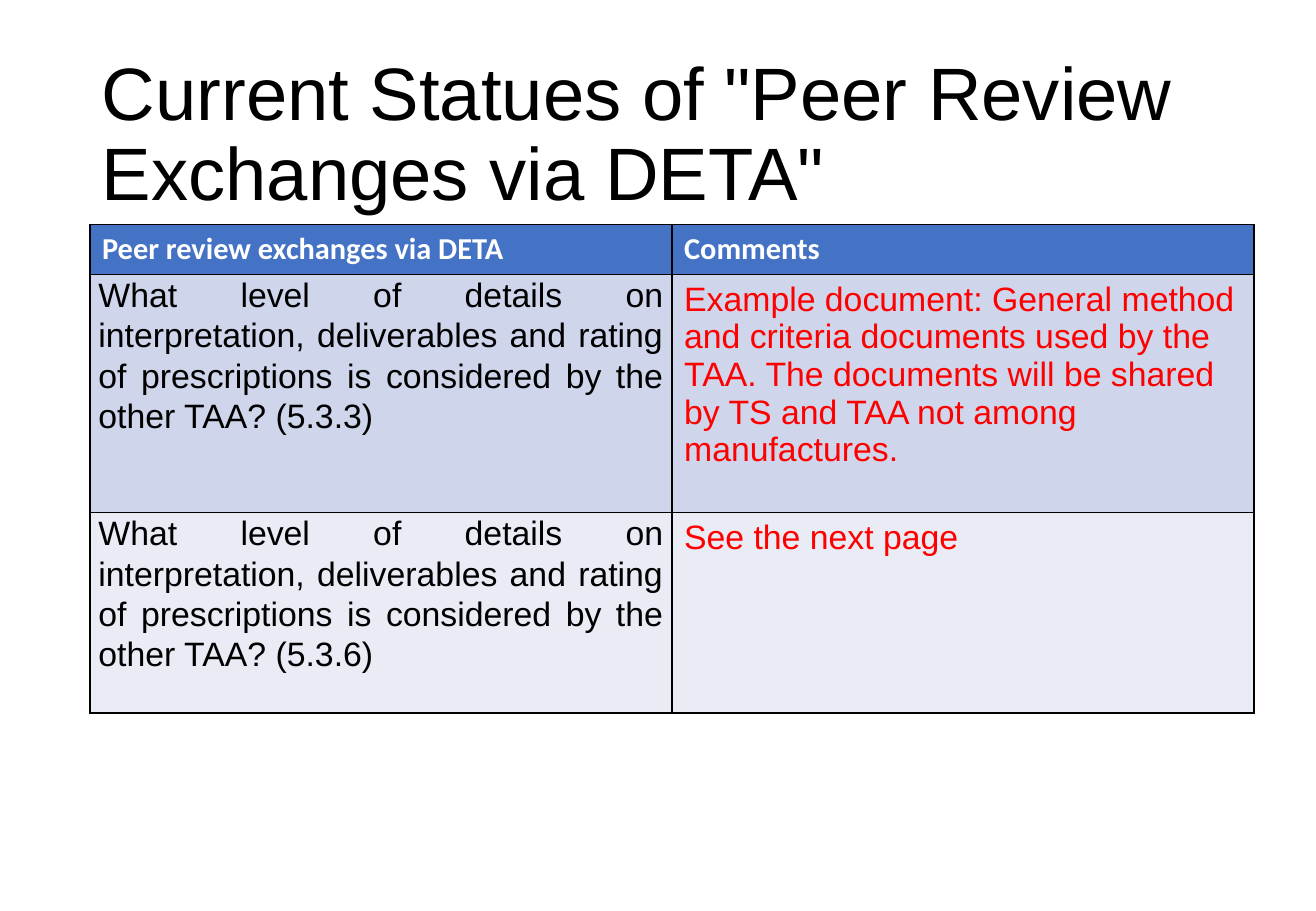
from pptx import Presentation
from pptx.dml.color import RGBColor
from pptx.enum.text import MSO_ANCHOR, PP_ALIGN
from pptx.oxml import parse_xml
from pptx.oxml.ns import nsdecls
from pptx.util import Inches, Pt

TITLE = 'Current Statues of "Peer Review Exchanges via DETA"'
HEADER = ("Peer review exchanges via DETA", "Comments")
QUESTION = ("What level of details on interpretation, deliverables and rating of "
            "prescriptions is considered by the other TAA? ({})")
REVIEWS = [
    ("5.3.3", "Example document: General method and criteria documents used by the TAA. "
              "The documents will be shared by TS and TAA not among manufactures."),
    ("5.3.6", "See the next page"),
]

THEME = {
    "heading_font": "Calibri", "body_font": "Arial",
    "title_size": 44, "header_size": 18, "body_size": 20,
    "text": "000000", "header_text": "FFFFFF", "comment": "FF0000",
    "header_fill": "4472C4", "bands": ("CFD5EA", "E9EBF5"), "border": "000000",
}
LEFT, TABLE_TOP, COL_W = 0.74, 1.85, 4.79
ROW_HEIGHTS = (0.41, 1.96, 1.65)


def write_text(tf, text, size, color, font=THEME["body_font"], bold=False,
               align=PP_ALIGN.LEFT, spacing=1.0):
    tf.word_wrap = True
    p = tf.paragraphs[0]
    p.alignment = align
    p.line_spacing = spacing
    r = p.add_run()
    r.text = text
    r.font.name = font
    r.font.size = Pt(size)
    r.font.bold = bold
    r.font.color.rgb = RGBColor.from_string(color)


def style_cell(cell, fill):
    tcPr = cell._tc.get_or_add_tcPr()
    for side in ("lnL", "lnR", "lnT", "lnB"):
        tcPr.append(parse_xml(
            f'<a:{side} {nsdecls("a")} w="{Pt(1)}"><a:solidFill>'
            f'<a:srgbClr val="{THEME["border"]}"/></a:solidFill></a:{side}>'))
    cell.fill.solid()
    cell.fill.fore_color.rgb = RGBColor.from_string(fill)


def add_title(slide):
    sp = slide.shapes.add_textbox(Inches(LEFT), Inches(0.4), Inches(9.34), Inches(1.45))
    sp.text_frame.vertical_anchor = MSO_ANCHOR.MIDDLE
    write_text(sp.text_frame, TITLE, THEME["title_size"], THEME["text"], spacing=0.9)


def add_review_table(slide):
    table = slide.shapes.add_table(
        len(ROW_HEIGHTS), len(HEADER), Inches(LEFT), Inches(TABLE_TOP),
        Inches(COL_W * len(HEADER)), Inches(sum(ROW_HEIGHTS))).table
    for row, height in zip(table.rows, ROW_HEIGHTS):
        row.height = Inches(height)
    for col, heading in enumerate(HEADER):
        cell = table.cell(0, col)
        style_cell(cell, THEME["header_fill"])
        write_text(cell.text_frame, heading, THEME["header_size"], THEME["header_text"],
                   font=THEME["heading_font"], bold=True)
    for row, ((section, comment), band) in enumerate(zip(REVIEWS, THEME["bands"]), 1):
        question, answer = table.cell(row, 0), table.cell(row, 1)
        for cell in (question, answer):
            style_cell(cell, band)
        question.margin_left = question.margin_right = Inches(0.07)
        question.margin_top = question.margin_bottom = 0
        write_text(question.text_frame, QUESTION.format(section), THEME["body_size"],
                   THEME["text"], align=PP_ALIGN.JUSTIFY, spacing=1.07)
        write_text(answer.text_frame, comment, THEME["body_size"], THEME["comment"])


def main():
    prs = Presentation()
    prs.slide_width, prs.slide_height = Inches(10.83), Inches(7.5)
    slide = prs.slides.add_slide(prs.slide_layouts[6])
    add_title(slide)
    add_review_table(slide)
    prs.save("out.pptx")


if __name__ == "__main__":
    main()
